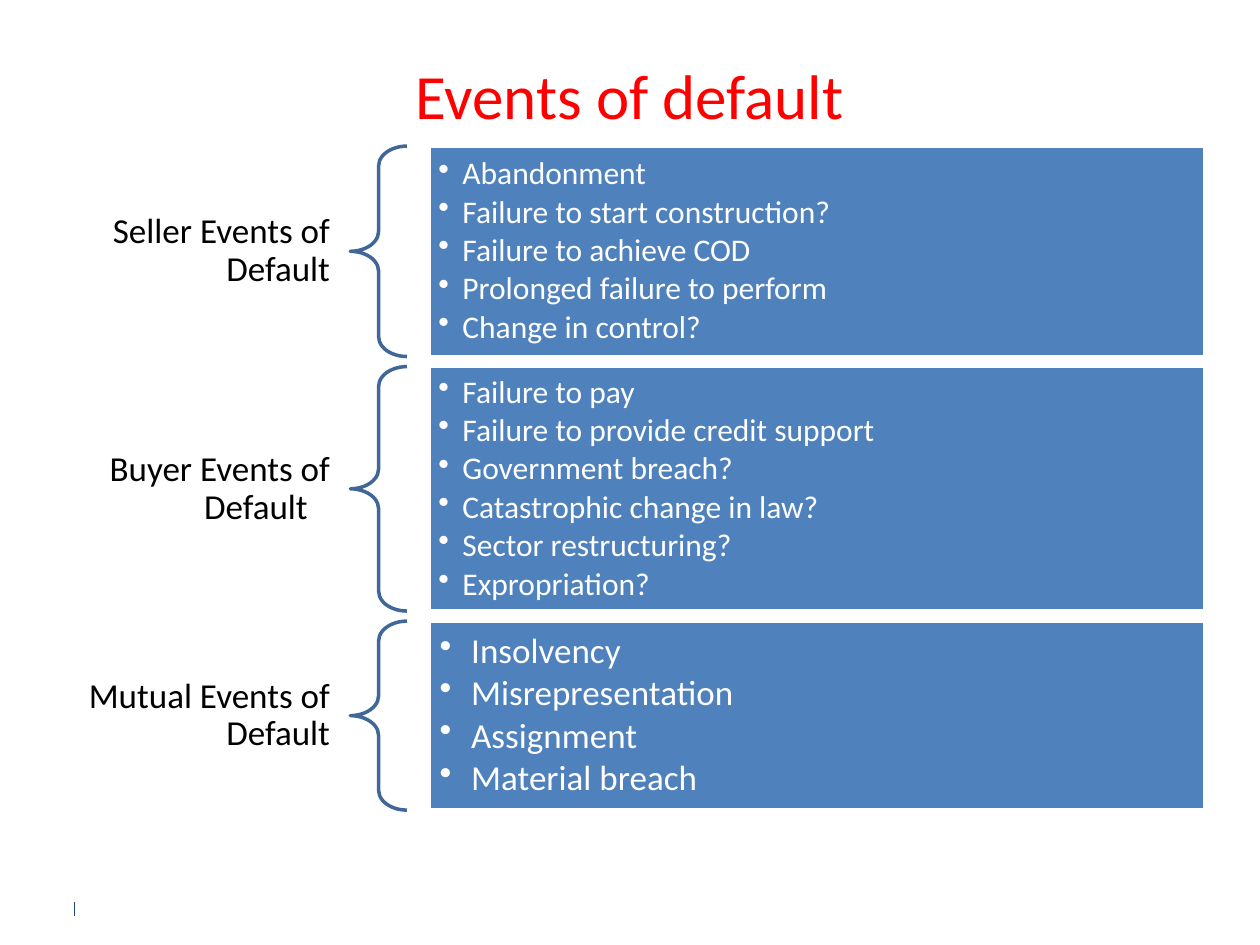
"""Build the slide on events of default, grouped by party."""
import dataclasses

import lxml.etree
import pptx
import pptx.dml.color
import pptx.enum.shapes
import pptx.enum.text
import pptx.oxml.ns
import pptx.util

Inches = pptx.util.Inches
RGBColor = pptx.dml.color.RGBColor
Shapes = pptx.enum.shapes.MSO_SHAPE
Align = pptx.enum.text.PP_ALIGN

RED = RGBColor(0xFF, 0x00, 0x00)
BLACK = RGBColor(0x00, 0x00, 0x00)
WHITE = RGBColor(0xFF, 0xFF, 0xFF)
BLUE = RGBColor(0x4F, 0x81, 0xBD)
BRACE_BLUE = RGBColor(0x3F, 0x67, 0x97)
NAVY = RGBColor(0x1F, 0x49, 0x7D)

FIRST_TOP = 1.16
GAP = 0.08
LABEL_HEIGHT = 0.7


@dataclasses.dataclass
class Party:
    label: str
    events: list[str]
    height: float
    size: int = 18
    indent: float = 0.19
    inset: float = 0.07


PARTIES = [
    Party("Seller Events of Default",
          ["Abandonment", "Failure to start construction?", "Failure to achieve COD",
           "Prolonged failure to perform", "Change in control?"], 1.67),
    Party("Buyer Events of Default\t",
          ["Failure to pay", "Failure to provide credit support", "Government breach?",
           "Catastrophic change in law?", "Sector restructuring?", "Expropriation?"], 1.94),
    Party("Mutual Events of Default",
          ["Insolvency", "Misrepresentation", "Assignment", "Material breach"],
          1.5, size=20, indent=0.25, inset=0.08),
]


def write(box, lines: list[str], *, size: int, color: RGBColor, align=Align.LEFT,
          inset: tuple[float, float] = (0.1, 0.05), line_spacing: float = 1.0,
          space_after: float = 0, bullet_indent: float = 0) -> None:
    """Fill a shape with one formatted paragraph per line."""
    frame = box.text_frame
    frame.word_wrap = True
    frame.auto_size = pptx.enum.text.MSO_AUTO_SIZE.NONE
    frame.vertical_anchor = pptx.enum.text.MSO_ANCHOR.MIDDLE
    frame.margin_left = frame.margin_right = Inches(inset[0])
    frame.margin_top = frame.margin_bottom = Inches(inset[1])
    for number, line in enumerate(lines):
        para = frame.add_paragraph() if number else frame.paragraphs[0]
        para.alignment = align
        para.line_spacing = line_spacing
        para.space_before = pptx.util.Pt(0)
        para.space_after = pptx.util.Pt(space_after)
        span = para.add_run()
        span.text = line
        span.font.name = "Calibri"
        span.font.size = pptx.util.Pt(size)
        span.font.color.rgb = color
        if bullet_indent:
            para.level = 1
            add_bullet(para, bullet_indent)


def add_bullet(para, indent: float) -> None:
    """Give a paragraph a round bullet with a hanging indent."""
    properties = para._p.get_or_add_pPr()
    properties.set("marL", str(Inches(indent)))
    properties.set("indent", str(-Inches(indent)))
    bullet = lxml.etree.SubElement(properties, pptx.oxml.ns.qn("a:buChar"))
    bullet.set("char", "•")


def draw_party(page, party: Party, top: float) -> None:
    """Draw a label, its brace and its box of events."""
    label_top = top + (party.height - LABEL_HEIGHT) / 2
    label = page.shapes.add_textbox(Inches(0.52), Inches(label_top),
                                    Inches(2.26), Inches(LABEL_HEIGHT))
    write(label, [party.label], size=20, color=BLACK, align=Align.RIGHT,
          inset=(0.16, 0.06), line_spacing=0.9)

    brace = page.shapes.add_shape(Shapes.LEFT_BRACE, Inches(2.78), Inches(top),
                                  Inches(0.45), Inches(party.height))
    brace.shadow.inherit = False
    brace.adjustments[0] = 0.35
    brace.adjustments[1] = 0.5
    brace.fill.background()
    brace.line.color.rgb = BRACE_BLUE
    brace.line.width = pptx.util.Pt(2)

    box = page.shapes.add_shape(Shapes.RECTANGLE, Inches(3.41), Inches(top),
                                Inches(6.15), Inches(party.height))
    box.shadow.inherit = False
    box.fill.solid()
    box.fill.fore_color.rgb = BLUE
    box.line.color.rgb = WHITE
    box.line.width = pptx.util.Pt(2)
    write(box, party.events, size=party.size, color=WHITE,
          inset=(party.inset, party.inset), line_spacing=0.9, space_after=2.5,
          bullet_indent=party.indent)


def draw_footer_mark(page) -> None:
    """Draw the short upright line at the foot of the slide."""
    mark = page.shapes.add_connector(pptx.enum.shapes.MSO_CONNECTOR.STRAIGHT,
                                     Inches(0.59), Inches(7.16), Inches(0.59), Inches(7.27))
    mark.line.color.rgb = NAVY
    mark.line.width = pptx.util.Pt(0.5)
    lxml.etree.SubElement(mark._element.spPr, pptx.oxml.ns.qn("a:effectLst"))


def main() -> None:
    """Build and save the deck."""
    deck = pptx.Presentation()
    deck.slide_width, deck.slide_height = Inches(10), Inches(7.5)
    page = deck.slides.add_slide(deck.slide_layouts.get_by_name("Title Only"))
    draw_footer_mark(page)

    title = page.shapes.title
    title.left, title.top = Inches(0.39), Inches(0.47)
    title.width, title.height = Inches(9.21), Inches(0.55)
    write(title, ["Events of default"], size=36, color=RED, align=Align.CENTER)

    top = FIRST_TOP
    for party in PARTIES:
        draw_party(page, party, top)
        top += party.height + GAP
    deck.save("out.pptx")


if __name__ == "__main__":
    main()
